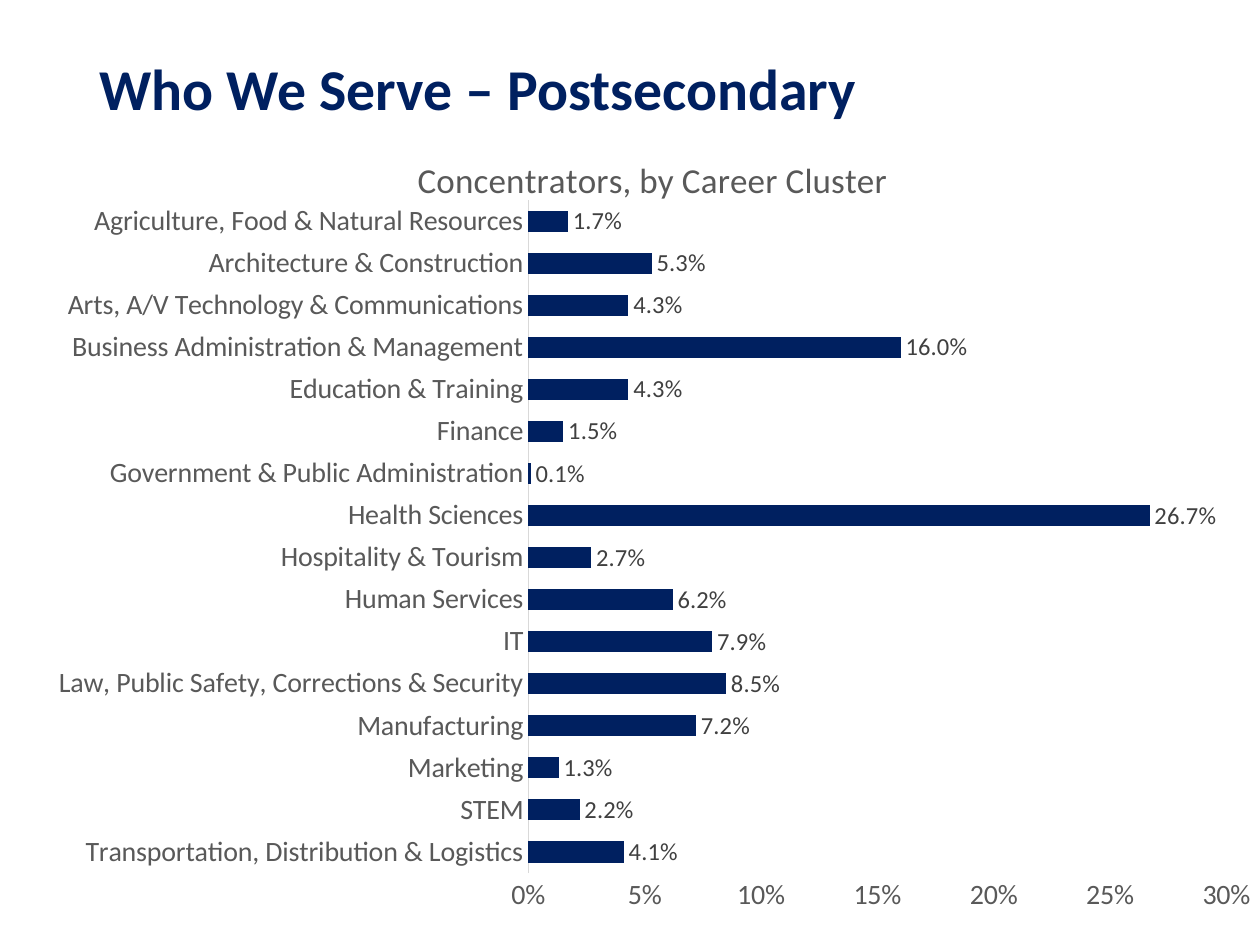
from lxml import etree
from pptx import Presentation
from pptx.chart.data import CategoryChartData
from pptx.dml.color import RGBColor
from pptx.enum.chart import XL_CHART_TYPE, XL_LABEL_POSITION, XL_TICK_MARK
from pptx.enum.text import MSO_ANCHOR, PP_ALIGN
from pptx.oxml.ns import qn
from pptx.util import Emu, Pt

BAR = XL_CHART_TYPE.BAR_CLUSTERED
OUTSIDE_END = XL_LABEL_POSITION.OUTSIDE_END
NO_TICK = XL_TICK_MARK.NONE
MIDDLE = MSO_ANCHOR.MIDDLE
LEFT = PP_ALIGN.LEFT

EMU_PER_PX = 914400 // 126
TITLE_ONLY = 5
FONT = "Calibri"
COLORS = {"navy": "002060", "axis_text": "595959", "label_text": "404040",
          "axis_line": "D9D9D9"}
TITLE_SPOT = {"xMode": "edge", "yMode": "edge", "x": 0.32, "y": 0.01}
PLOT_AREA = {"layoutTarget": "inner", "xMode": "edge", "yMode": "edge",
             "x": 0.413, "y": 0.075, "w": 0.554, "h": 0.853}
CLUSTERS = [
    ("Transportation, Distribution & Logistics", 0.041),
    ("STEM", 0.022),
    ("Marketing", 0.013),
    ("Manufacturing", 0.072),
    ("Law, Public Safety, Corrections & Security", 0.085),
    ("IT", 0.079),
    ("Human Services", 0.062),
    ("Hospitality & Tourism", 0.027),
    ("Health Sciences", 0.267),
    ("Government & Public Administration", 0.001),
    ("Finance", 0.015),
    ("Education & Training", 0.043),
    ("Business Administration & Management", 0.16),
    ("Arts, A/V Technology & Communications", 0.043),
    ("Architecture & Construction", 0.053),
    ("Agriculture, Food & Natural Resources", 0.017),
]


def px(length):
    """Turn pixels into EMU."""
    return Emu(length * EMU_PER_PX)


def color(name):
    """Look up a named colour."""
    return RGBColor.from_string(COLORS[name])


def style_font(font, size, color_name, bold=False):
    """Set face, size, colour and weight."""
    font.name = FONT
    font.size = Pt(size)
    font.bold = bold
    font.color.rgb = color(color_name)


def set_heading(slide, text):
    """Place and format the slide title."""
    heading = slide.shapes.title
    heading.left, heading.top = px(87), px(0)
    heading.width, heading.height = px(1086), px(183)
    frame = heading.text_frame
    frame.vertical_anchor = MIDDLE
    frame.word_wrap = True
    paragraph = frame.paragraphs[0]
    paragraph.alignment = LEFT
    paragraph.line_spacing = 0.9
    run = paragraph.add_run()
    run.text = text
    style_font(run.font, 33, "navy", bold=True)


def add_cluster_chart(slide):
    """Add the bar chart of shares by career cluster."""
    shares = CategoryChartData(number_format="0.0%")
    shares.categories = [cluster for cluster, _ in CLUSTERS]
    shares.add_series("Series 1", [share for _, share in CLUSTERS])
    frame = slide.shapes.add_chart(BAR, px(8), px(141), px(1260), px(789), shares)
    return frame.chart


def pin_layout(part, position, settings):
    """Give a chart part a manual layout in fractions of the chart."""
    for automatic in part.findall(qn("c:layout")):
        part.remove(automatic)
    layout = etree.Element(qn("c:layout"))
    part.insert(position, layout)
    manual = etree.SubElement(layout, qn("c:manualLayout"))
    for tag, value in settings.items():
        etree.SubElement(manual, qn(f"c:{tag}"), val=str(value))


def set_chart_title(chart, text):
    """Write the chart title above the plot."""
    chart.has_title = True
    run = chart.chart_title.text_frame.paragraphs[0].add_run()
    run.text = text
    style_font(run.font, 20, "axis_text")
    chart.chart_title.include_in_layout = False
    pin_layout(chart.element.find(".//" + qn("c:title")), 1, TITLE_SPOT)


def style_axes(chart):
    """Format both axes and scale the percentages."""
    clusters, percents = chart.category_axis, chart.value_axis
    for axis in (clusters, percents):
        axis.major_tick_mark = axis.minor_tick_mark = NO_TICK
        axis.has_major_gridlines = False
        style_font(axis.tick_labels.font, 16, "axis_text")
    clusters.format.line.color.rgb = color("axis_line")
    clusters.format.line.width = Pt(0.75)
    percents.format.line.fill.background()
    percents.minimum_scale, percents.maximum_scale = 0, 0.3
    percents.major_unit = 0.05
    percents.tick_labels.number_format = "0%"
    percents.tick_labels.number_format_is_linked = False


def style_bars(chart):
    """Colour the bars and label their shares."""
    plot = chart.plots[0]
    plot.gap_width = 100
    plot.vary_by_categories = False
    bars = plot.series[0]
    bars.format.fill.solid()
    bars.format.fill.fore_color.rgb = color("navy")
    labels = bars.data_labels
    labels.show_value = True
    labels.position = OUTSIDE_END
    labels.number_format = "0.0%"
    labels.number_format_is_linked = False
    style_font(labels.font, 14, "label_text")


def main():
    """Build and save the slide."""
    deck = Presentation()
    deck.slide_width, deck.slide_height = px(1260), px(945)
    slide = deck.slides.add_slide(deck.slide_layouts[TITLE_ONLY])
    set_heading(slide, "Who We Serve – Postsecondary")
    chart = add_cluster_chart(slide)
    chart.has_legend = False
    chart.font.name = FONT
    chart.font.size = Pt(16)
    set_chart_title(chart, "Concentrators, by Career Cluster")
    style_axes(chart)
    style_bars(chart)
    pin_layout(chart.element.find(".//" + qn("c:plotArea")), 0, PLOT_AREA)
    deck.save("out.pptx")


if __name__ == "__main__":
    main()
